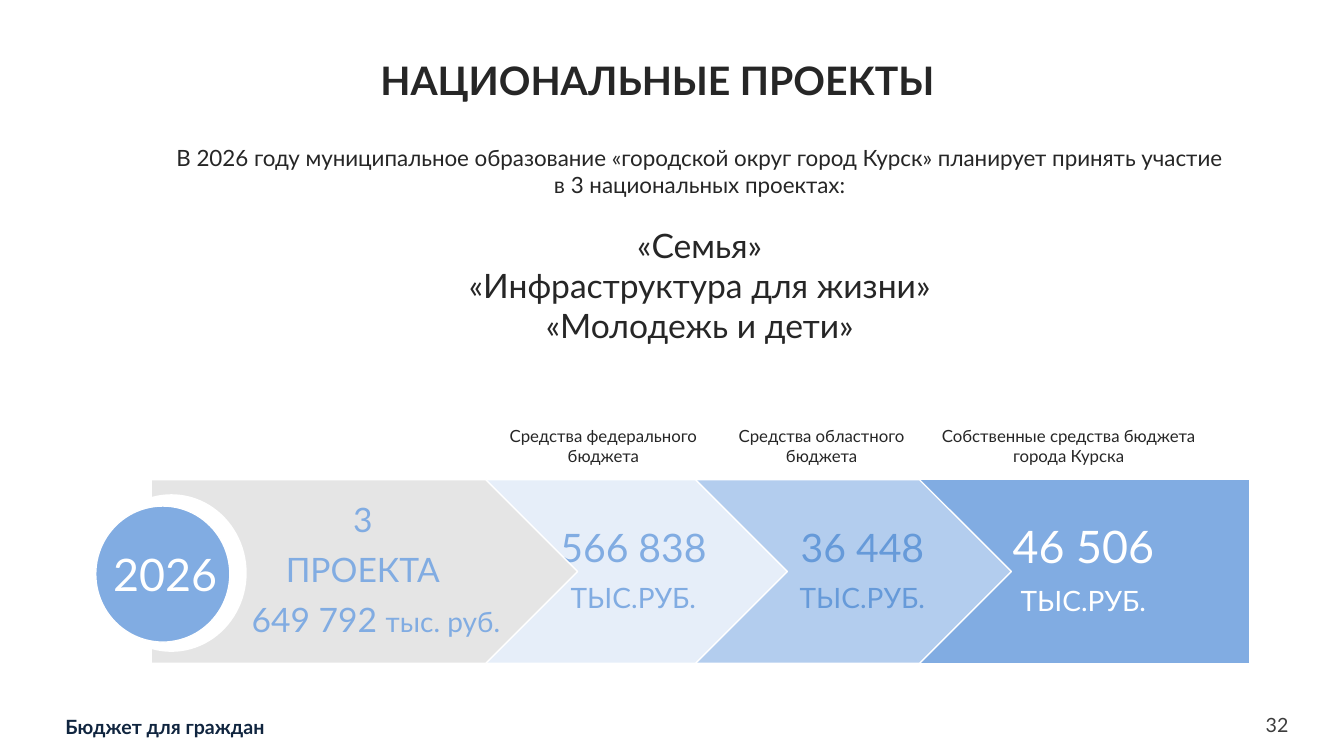
import pptx
import pptx.dml.color
import pptx.enum.shapes
import pptx.enum.text
import pptx.util

Inches = pptx.util.Inches
Pt = pptx.util.Pt
KIND = pptx.enum.shapes.MSO_SHAPE
ALIGN = pptx.enum.text.PP_ALIGN
ANCHOR = pptx.enum.text.MSO_ANCHOR
DARK, BLUE, WHITE = "262626", "81ACE2", "FFFFFF"


def color(code):
    return pptx.dml.color.RGBColor.from_string(code)


def apply(item, form):
    for key, value in form.items():
        setattr(item, key, value)


def place(box):
    return [Inches(value) for value in box]


def write(para, text, size, code, bold=False):
    run = para.add_run()
    run.text = text
    apply(run.font, {"name": "Lato", "size": Pt(size), "bold": bold})
    run.font.color.rgb = color(code)


def lines(frame, rows, code, form, gap=0):
    for index, (text, size) in enumerate(rows):
        para = frame.paragraphs[0] if index == 0 else frame.add_paragraph()
        apply(para, form)
        if index and gap:
            para.space_before = Pt(gap)
        write(para, text, size, code)


def note(slide, box, anchor):
    frame = slide.shapes.add_textbox(*place(box)).text_frame
    apply(frame, {"word_wrap": True, "vertical_anchor": anchor,
                  "margin_left": 0, "margin_right": 0,
                  "margin_top": 0, "margin_bottom": 0})
    return frame


def block(slide, kind, box, fill):
    shape = slide.shapes.add_shape(kind, *place(box))
    shape.shadow.inherit = False
    shape.fill.solid()
    shape.fill.fore_color.rgb = color(fill)
    shape.line.color.rgb = color(WHITE)
    shape.line.width = Pt(1)
    return shape


def title(slide, box):
    shape = slide.shapes.title
    apply(shape, dict(zip(("left", "top", "width", "height"), place(box))))
    shape.text_frame.vertical_anchor = ANCHOR.MIDDLE
    para = shape.text_frame.paragraphs[0]
    apply(para, {"alignment": ALIGN.CENTER, "line_spacing": 0.9})
    write(para, "НАЦИОНАЛЬНЫЕ ПРОЕКТЫ", 28, DARK, True)


def intro(slide, box):
    frame = note(slide, box, ANCHOR.TOP)
    rows = [
        ("В 2026 году муниципальное образование «городской округ город Курск» "
         "планирует принять участие", 16),
        ("в 3 национальных проектах:", 16),
        ("«Семья»", 24),
        ("«Инфраструктура для жизни»", 24),
        ("«Молодежь и дети»", 24),
    ]
    lines(frame, rows, DARK, {"alignment": ALIGN.CENTER})
    frame.paragraphs[2].space_before = Pt(19)


def heads(slide, box):
    names = ["Средства федерального бюджета", "Средства областного бюджета",
             "Собственные средства бюджета города Курска"]
    table = slide.shapes.add_table(1, len(names), *place(box)).table
    apply(table, {"first_row": False, "horz_banding": False})
    for index, (name, width) in enumerate(zip(names, (2.21, 2.12, 2.78))):
        table.columns[index].width = Inches(width)
        cell = table.cell(0, index)
        cell.fill.background()
        lines(cell.text_frame, [(name, 12)], DARK, {"alignment": ALIGN.CENTER})


def band(slide, box):
    left, top, width, high = box
    unit = "ТЫС.РУБ."
    parts = [
        (KIND.RECTANGLE, 7.6, 3.29, BLUE, WHITE, 0.1, [("46 506", 32), (unit, 20)]),
        (KIND.PENTAGON, 5.34, 3.19, "B3CDEE", "669AD9", 0.79, [("36 448", 28), (unit, 20)]),
        (KIND.PENTAGON, 3.11, 3.2, "E6EEF9", BLUE, 0.7, [("566 838", 28), (unit, 20)]),
        (KIND.PENTAGON, 0, 4.23, "E5E5E5", BLUE, 0.52,
         [("3", 24), ("ПРОЕКТА", 24), ("649 792 ", 24)]),
    ]
    form = {"alignment": ALIGN.CENTER, "line_spacing": 0.9}
    for kind, shift, wide, fill, code, inset, rows in parts:
        shape = block(slide, kind, (left + shift, top, wide, high), fill)
        apply(shape.text_frame, {"word_wrap": True, "margin_left": Inches(inset),
                                 "vertical_anchor": ANCHOR.MIDDLE})
        lines(shape.text_frame, rows, code, form, 10)
    total = shape.text_frame.paragraphs[-1]
    write(total, "тыс. руб.", 20, BLUE)
    total._p.get_or_add_pPr().set("marL", str(Inches(0.26)))


def badge(slide, box):
    left, top, width, high = box
    block(slide, KIND.OVAL, (left + 0.01, top, width, high), WHITE)
    disc = block(slide, KIND.OVAL, (left, top + 0.11, 1.33, 1.35), BLUE)
    apply(disc.text_frame, {"word_wrap": False, "vertical_anchor": ANCHOR.MIDDLE,
                            "margin_left": Inches(0.05), "margin_right": 0})
    lines(disc.text_frame, [("2026", 32)], WHITE, {"alignment": ALIGN.CENTER})


def foot(slide, box):
    left, top, width, high = box
    frame = note(slide, (left, top, 6, high), ANCHOR.TOP)
    write(frame.paragraphs[0], "Бюджет для граждан", 14, "10253F", True)
    frame = note(slide, (left + width - 0.5, top - 0.02, 0.5, high), ANCHOR.MIDDLE)
    lines(frame, [("32", 14)], "3C3C3C", {"alignment": ALIGN.RIGHT})


def main():
    deck = pptx.Presentation()
    apply(deck, {"slide_width": Inches(13.33), "slide_height": Inches(7.5)})
    slide = deck.slides.add_slide(deck.slide_layouts[5])
    title(slide, (0.58, 0.44, 11.88, 0.76))
    intro(slide, (1.01, 1.43, 11.86, 2.02))
    heads(slide, (4.88, 4.17, 7.11, 0.5))
    band(slide, (1.5, 4.76, 10.89, 1.82))
    badge(slide, (0.95, 4.91, 1.48, 1.55))
    foot(slide, (0.65, 7.09, 12.13, 0.24))
    deck.save("out.pptx")


if __name__ == "__main__":
    main()
